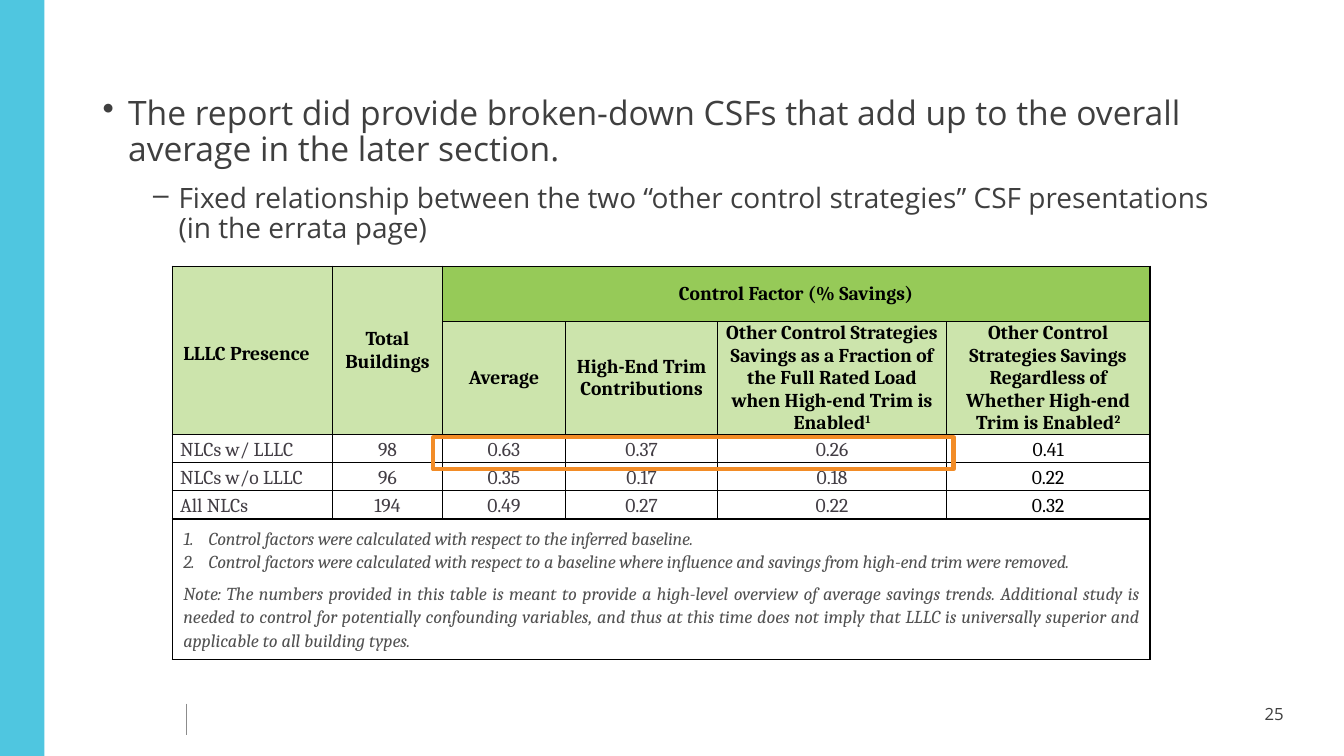
from lxml import etree
from pptx import Presentation
from pptx.dml.color import RGBColor
from pptx.enum import shapes, text
from pptx.oxml.ns import qn
from pptx.util import Cm, Pt

CYAN = RGBColor(0x4F, 0xC6, 0xE0)
ORANGE = RGBColor(0xF2, 0x8C, 0x27)
GREEN = RGBColor(0x96, 0xCA, 0x58)
PALE_GREEN = RGBColor(0xCC, 0xE4, 0xAC)
BLACK = RGBColor(0, 0, 0)
BODY = RGBColor(0x3F, 0x3F, 0x3F)
DATA = RGBColor(0x42, 0x3D, 0x44)
NOTE = RGBColor(0x51, 0x51, 0x51)
RULE = RGBColor(0x8C, 0x8C, 0x8C)

CENTER, JUSTIFY = text.PP_ALIGN.CENTER, text.PP_ALIGN.JUSTIFY
WIDE_INSETS = (Cm(0.28), Cm(0.15))
NARROW_INSETS = (Cm(0.2), 0)

COL_WIDTHS = (4.04, 2.77, 3.1, 3.84, 5.76, 5.13)
ROW_HEIGHTS = (1.4, 2.84, 0.71, 0.71, 0.71, 3.53)
# A "^" marks the start of a superscript.
SUB_HEADS = (
    "Average",
    "High-End Trim Contributions",
    "Other Control Strategies Savings as a Fraction of the Full Rated Load "
    "when High-end Trim is Enabled^1",
    "Other Control Strategies Savings Regardless of Whether High-end Trim is Enabled^2",
)
ROWS = (
    ("NLCs w/ LLLC", "98", "0.63", "0.37", "0.26", "0.41"),
    ("NLCs w/o LLLC", "96", "0.35", "0.17", "0.18", "0.22"),
    ("All NLCs", "194", "0.49", "0.27", "0.22", "0.32"),
)
FOOTNOTES = (
    "1.\tControl factors were calculated with respect to the inferred baseline.",
    "2.\tControl factors were calculated with respect to a baseline where influence "
    "and savings from high-end trim were removed.",
)
CAVEAT = (
    "Note: The numbers provided in this table is meant to provide a high-level overview "
    "of average savings trends. Additional study is needed to control for potentially "
    "confounding variables, and thus at this time does not imply that LLLC is universally "
    "superior and applicable to all building types."
)


def style_runs(p, font, size, color, bold=False, italic=False):
    for r in p.runs:
        r.font.name, r.font.size = font, Pt(size)
        r.font.bold, r.font.italic = bold, italic
        r.font.color.rgb = color


def hang(p, left, bullet=None):
    """Give a paragraph a hanging indent and, if asked, a bullet."""
    pPr = p._p.get_or_add_pPr()
    pPr.set("marL", str(Cm(left)))
    pPr.set("indent", str(-Cm(0.64)))
    if bullet:
        etree.SubElement(pPr, qn("a:buChar")).set("char", bullet)


def add_text_box(s, left, top, width, height):
    tf = s.shapes.add_textbox(Cm(left), Cm(top), Cm(width), Cm(height)).text_frame
    tf.word_wrap = True
    return tf


def add_rect(s, left, top, width, height, fill=None, line=None):
    sp = s.shapes.add_shape(shapes.MSO_SHAPE.RECTANGLE,
                            Cm(left), Cm(top), Cm(width), Cm(height))
    sp.shadow.inherit = False
    if fill:
        sp.fill.solid()
        sp.fill.fore_color.rgb = fill
    else:
        sp.fill.background()
    if line:
        sp.line.color.rgb, sp.line.width = line, Pt(3)
    else:
        sp.line.fill.background()


def add_footer_rule(s):
    line = s.shapes.add_connector(shapes.MSO_CONNECTOR.STRAIGHT,
                                  Cm(4.7), Cm(17.73), Cm(4.7), Cm(18.52))
    line.line.color.rgb, line.line.width = RULE, Pt(1)
    etree.SubElement(line._element.spPr, qn("a:effectLst"))


def add_bullets(s):
    tf = add_text_box(s, 2.34, 2.31, 29.21, 4.34)
    tf.text = ("The report did provide broken-down CSFs that add up to the overall "
               "average in the later section.")
    sub = tf.add_paragraph()
    sub.text = ("Fixed relationship between the two “other control strategies” CSF "
                "presentations (in the errata page)")
    sub.level, sub.space_before = 1, Pt(5)
    for p, left, bullet, size in zip(tf.paragraphs, (0.64, 1.91), "•–", (24, 20)):
        hang(p, left, bullet)
        p.line_spacing, p.space_after = 0.9, Pt(6)
        style_runs(p, "Open Sans", size, BODY)


def frame_cell(cell, fill, insets):
    """Set insets, thin black borders and fill; borders precede the fill in the XML."""
    cell.vertical_anchor = text.MSO_ANCHOR.MIDDLE
    cell.margin_left = cell.margin_right = insets[0]
    cell.margin_top = cell.margin_bottom = insets[1]
    tcPr = cell._tc.get_or_add_tcPr()
    for side in ("lnL", "lnR", "lnT", "lnB"):
        ln = etree.SubElement(tcPr, qn(f"a:{side}"), w=str(Pt(1)))
        solid = etree.SubElement(ln, qn("a:solidFill"))
        etree.SubElement(solid, qn("a:srgbClr"), val=str(BLACK))
    if fill:
        cell.fill.solid()
        cell.fill.fore_color.rgb = fill
    else:
        cell.fill.background()


def write_cell(cell, content, color, align=CENTER, bold=False, spacing=None):
    p = cell.text_frame.paragraphs[0]
    words, _, mark = content.partition("^")
    p.text = words
    if mark:
        r = p.add_run()
        r.text = mark
        r.font._element.set("baseline", "30000")
    p.alignment, p.line_spacing = align, spacing
    style_runs(p, "Cambria", 14, color, bold)


def write_notes(cell):
    tf = cell.text_frame
    tf.text = "\n".join(FOOTNOTES + (CAVEAT,))
    for p in tf.paragraphs:
        p.alignment, p.line_spacing = JUSTIFY, 1.12
        style_runs(p, "Cambria", 13, NOTE, italic=True)
        for r in p.runs:
            r.font._element.set("spc", "0" if r.text == CAVEAT else "-10")
    for p in tf.paragraphs[:2]:
        hang(p, 0.64)
    tf.paragraphs[2].space_before = Pt(6)


def add_savings_table(s):
    table = s.shapes.add_table(len(ROW_HEIGHTS), len(COL_WIDTHS), Cm(4.34), Cm(6.71),
                               Cm(sum(COL_WIDTHS)), Cm(sum(ROW_HEIGHTS))).table
    table.first_row = table.horz_banding = False
    for col, width in zip(table.columns, COL_WIDTHS):
        col.width = Cm(width)
    for row, height in zip(table.rows, ROW_HEIGHTS):
        row.height = Cm(height)

    for i, row in enumerate(table.rows):
        for j, cell in enumerate(row.cells):
            fill = None if i > 1 else GREEN if i == 0 and j > 1 else PALE_GREEN
            wide = i in (0, 5) or (i == 1 and j < 2)
            frame_cell(cell, fill, WIDE_INSETS if wide else NARROW_INSETS)
    for start, end in (((0, 0), (1, 0)), ((0, 1), (1, 1)), ((0, 2), (0, 5)), ((5, 0), (5, 5))):
        table.cell(*start).merge(table.cell(*end))

    write_cell(table.cell(0, 0), "LLLC Presence", BLACK, JUSTIFY, True, 1.35)
    write_cell(table.cell(0, 1), "Total Buildings", BLACK, bold=True)
    write_cell(table.cell(0, 2), "Control Factor (% Savings)", BLACK, bold=True)
    for j, head in enumerate(SUB_HEADS, 2):
        write_cell(table.cell(1, j), head, BLACK, bold=True)
    for i, values in enumerate(ROWS, 2):
        for j, value in enumerate(values):
            write_cell(table.cell(i, j), value, BLACK if j == 5 else DATA,
                       CENTER if j else JUSTIFY, spacing=1.12)
    write_notes(table.cell(5, 0))


def add_page_number(s):
    tf = add_text_box(s, 31.62, 17.6, 1.42, 1.02)
    tf.text = "25"
    style_runs(tf.paragraphs[0], "Open Sans", 12, BODY)


def main():
    prs = Presentation()
    prs.slide_width, prs.slide_height = Cm(33.87), Cm(19.05)
    s = prs.slides.add_slide(prs.slide_layouts[6])
    add_rect(s, 0, 0, 1.12, 19.05, fill=CYAN)
    add_footer_rule(s)
    add_savings_table(s)
    add_page_number(s)
    add_bullets(s)
    add_rect(s, 10.92, 11.02, 13.11, 0.81, line=ORANGE)
    prs.save("out.pptx")


if __name__ == "__main__":
    main()
